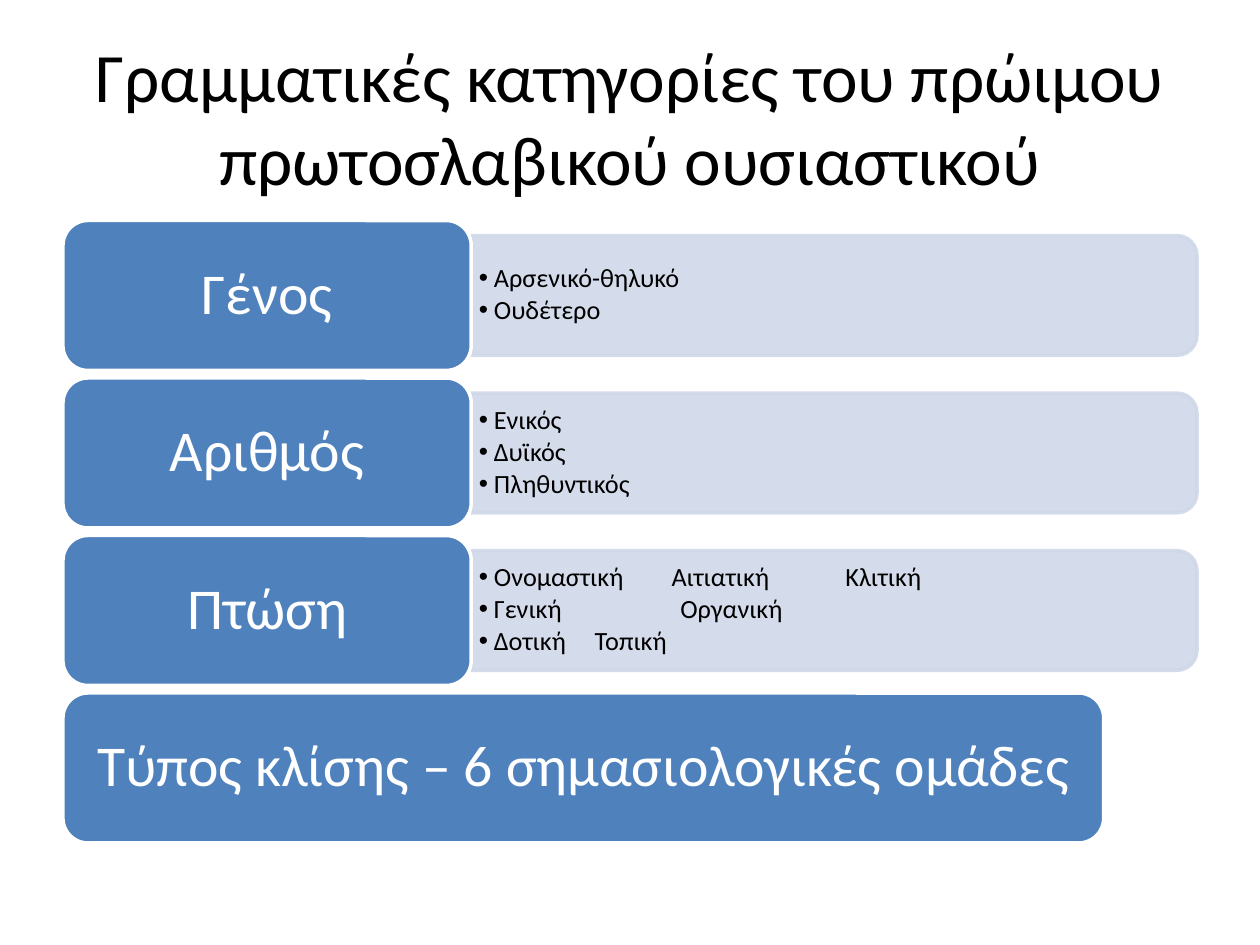
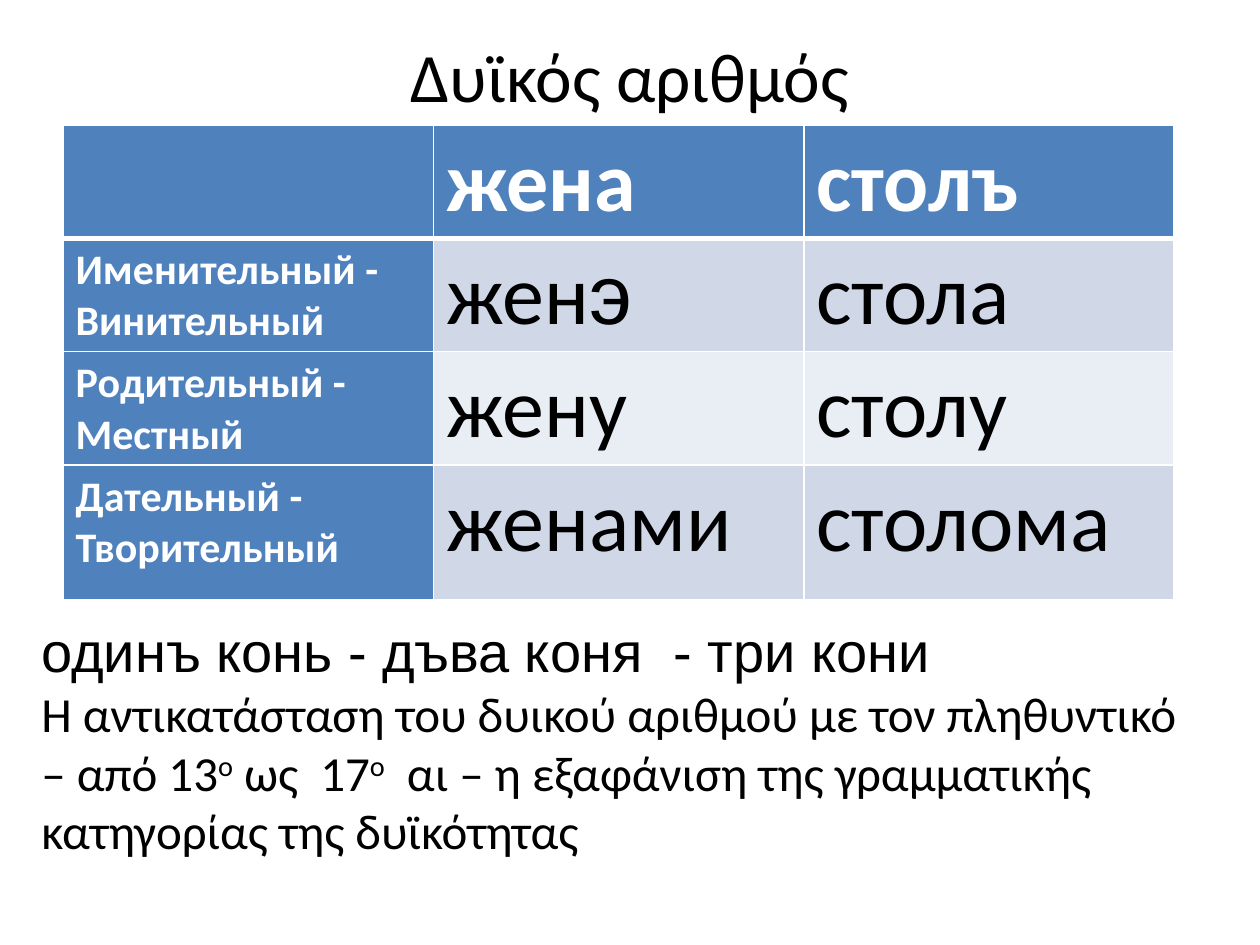
"""Build two slides on the early Proto-Slavic noun and its dual number."""
from lxml.etree import SubElement
from pptx import Presentation
from pptx.dml.color import RGBColor
from pptx.enum.shapes import MSO_SHAPE
from pptx.enum.text import MSO_ANCHOR, PP_ALIGN
from pptx.oxml.ns import qn
from pptx.util import Inches, Pt

ROUND, TAB = MSO_SHAPE.ROUNDED_RECTANGLE, MSO_SHAPE.ROUND_2_SAME_RECTANGLE
MID, TOP = MSO_ANCHOR.MIDDLE, MSO_ANCHOR.TOP
MEET, LEFT = PP_ALIGN.CENTER, PP_ALIGN.LEFT
BLUE, PALE, MIST, WHITE, BLACK = "4F81BD", "D0D8E8", "E9EDF4", "FFFFFF", "000000"
SANS, ARIAL = "Calibri", "Arial"


def paint(fill, tone):
    """Fill an area, line or font with a hex colour."""
    fill.solid()
    fill.fore_color.rgb = RGBColor.from_string(tone)


def write(frame, paras, tone, look, para, box):
    """Write paragraphs of (text, font changes) runs into a text frame."""
    for key, val in box.items():
        setattr(frame, key, val)
    for num, runs in enumerate(paras):
        par = frame.add_paragraph() if num else frame.paragraphs[0]
        for key, val in para.items():
            setattr(par, key, val)
        for text, change in runs:
            run = par.add_run()
            run.text = text
            for key, val in {**look, **change}.items():
                setattr(run.font, key, val)
            paint(run.font.fill, tone)


deck = Presentation()
deck.slide_width, deck.slide_height = Inches(10), Inches(7.5)
wide, high = deck.slide_width, deck.slide_height
edge = int(wide * 0.05)
blank = deck.slide_layouts[6]

heads = [("Γραμματικές κατηγορίες του πρώιμου πρωτοσλαβικού ουσιαστικού", 0.05),
         ("Δυϊκός αριθμός", 0.72)]
for text, foot in heads:
    slide = deck.slides.add_slide(blank)
    title = slide.shapes.add_textbox(edge, int(high * 0.04), wide - 2 * edge, int(high / 6))
    write(title.text_frame, [[(text, {})]], BLACK, {"name": SANS, "size": Pt(39.6)},
          {"alignment": MEET},
          {"word_wrap": True, "vertical_anchor": MID, "margin_bottom": Inches(foot)})
first, second = deck.slides

groups = [
    ("Γένος", [("Αρσενικό-θηλυκό", []), ("Ουδέτερο", [])]),
    ("Αριθμός", [("Ενικός", []), ("Δυϊκός", []), ("Πληθυντικός", [])]),
    ("Πτώση", [("Ονομαστική\tΑιτιατική\tΚλιτική", [1.53, 2.91]),
               ("Γενική\tΟργανική", [1.6]), ("Δοτική\tΤοπική", [0.92])]),
    ("Τύπος κλίσης – 6 σημασιολογικές ομάδες", []),
]
start, step, tall = Inches(1.75), int(high / 6), Inches(1.19)
left, span, deep = Inches(3.74), Inches(5.76), Inches(0.95)
for row, (name, items) in enumerate(groups):
    top = start + row * step
    if items:
        mid = top + tall // 2
        band = first.shapes.add_shape(
            TAB, left + (span - deep) // 2, mid - span // 2, deep, span)
        band.rotation = 90
        band.shadow.inherit = False
        band.line.width = Pt(2)
        for part in (band.fill, band.line.fill):
            paint(part, PALE)
        for tint in band.element.spPr.iter(qn("a:srgbClr")):
            SubElement(tint, qn("a:alpha"), val="90000")
        note = first.shapes.add_textbox(left, mid - Inches(0.43), Inches(5.71), Inches(0.86))
        write(note.text_frame, [[(text, {})] for text, stops in items], BLACK,
              {"name": SANS, "size": Pt(15)}, {"line_spacing": 0.9, "space_after": Pt(2)},
              {"word_wrap": True, "vertical_anchor": MID,
               "margin_left": Inches(0.06), "margin_right": Inches(0.06),
               "margin_top": Inches(0.03), "margin_bottom": Inches(0.03)})
        for par, (text, stops) in zip(note.text_frame.paragraphs, items):
            prop = par._p.get_or_add_pPr()
            prop.set("marL", str(Inches(0.12)))
            prop.set("indent", str(-Inches(0.12)))
            SubElement(prop, qn("a:buFont"), typeface=ARIAL)
            SubElement(prop, qn("a:buChar"), char="•")
            if stops:
                tabs = SubElement(prop, qn("a:tabLst"))
                for stop in stops:
                    SubElement(tabs, qn("a:tab"), pos=str(Inches(stop)), algn="l")
    card = first.shapes.add_shape(ROUND, edge, top, Inches(3.24 if items else 8.26), tall)
    card.shadow.inherit = False
    card.line.width = Pt(2)
    paint(card.fill, BLUE)
    paint(card.line.fill, WHITE)
    write(card.text_frame, [[(name, {})]], WHITE, {"name": SANS, "size": Pt(33)},
          {"alignment": MEET, "line_spacing": 0.9},
          {"word_wrap": True, "vertical_anchor": MID})

forms = [
    ["", [("жена", {})], [("столъ", {})]],
    ["Именительный - Винительный", [("жен", {}), ("э", {"name": ARIAL})], [("стола", {})]],
    ["Родительный - Местный", [("жену", {})], [("столу", {})]],
    ["Дательный - Творительный", [("женами", {})], [("столома", {})]],
]
sizes = [0.9, 0.9, 0.9, 1.07]
grid = second.shapes.add_table(4, 3, edge, Inches(0.99), Inches(8.83), Inches(sum(sizes))).table
for col in grid.columns:
    col.width = Inches(2.94)
for row, (size, line) in enumerate(zip(sizes, forms)):
    grid.rows[row].height = Inches(size)
    for col, data in enumerate(line):
        cell = grid.cell(row, col)
        head = row == 0 or col == 0
        paint(cell.fill, BLUE if head else PALE if row % 2 else MIST)
        runs = data if col else [(data, {"size": Pt(24)})] if data else []
        write(cell.text_frame, [runs], WHITE if head else BLACK,
              {"name": SANS, "size": Pt(48), "bold": head}, {"alignment": LEFT}, {})
        prop = cell._tc.get_or_add_tcPr()
        for spot, side in enumerate("LRTB"):
            thick = 3 if (row, side) in ((0, "B"), (1, "T")) else 1
            rim = SubElement(prop, qn("a:ln" + side), w=str(Pt(thick)))
            SubElement(SubElement(rim, qn("a:solidFill")), qn("a:srgbClr"), val=WHITE)
            prop.insert(spot, rim)

raised = {"italic": None, "underline": None}
words = [
    [("одинъ конь - дъва коня  - три кони", {"name": ARIAL, "size": Pt(32)})],
    [("Η αντικατάσταση του δυικού αριθμού με τον πληθυντικό – από 13", {}), ("ο", raised),
     (" ως  17", {}), ("ο", raised),
     ("  αι – η εξαφάνιση της γραμματικής κατηγορίας της δυϊκότητας", {})],
]
text = second.shapes.add_textbox(Inches(0.23), Inches(4.84), Inches(9.45), int(high * 0.34))
write(text.text_frame, words, BLACK, {"name": SANS, "size": Pt(28)}, {"alignment": LEFT},
      {"word_wrap": True, "vertical_anchor": TOP})
for run in text.text_frame.paragraphs[1].runs:
    if run.text == "ο":
        run._r.get_or_add_rPr().set("baseline", "30000")

deck.save("out.pptx")
